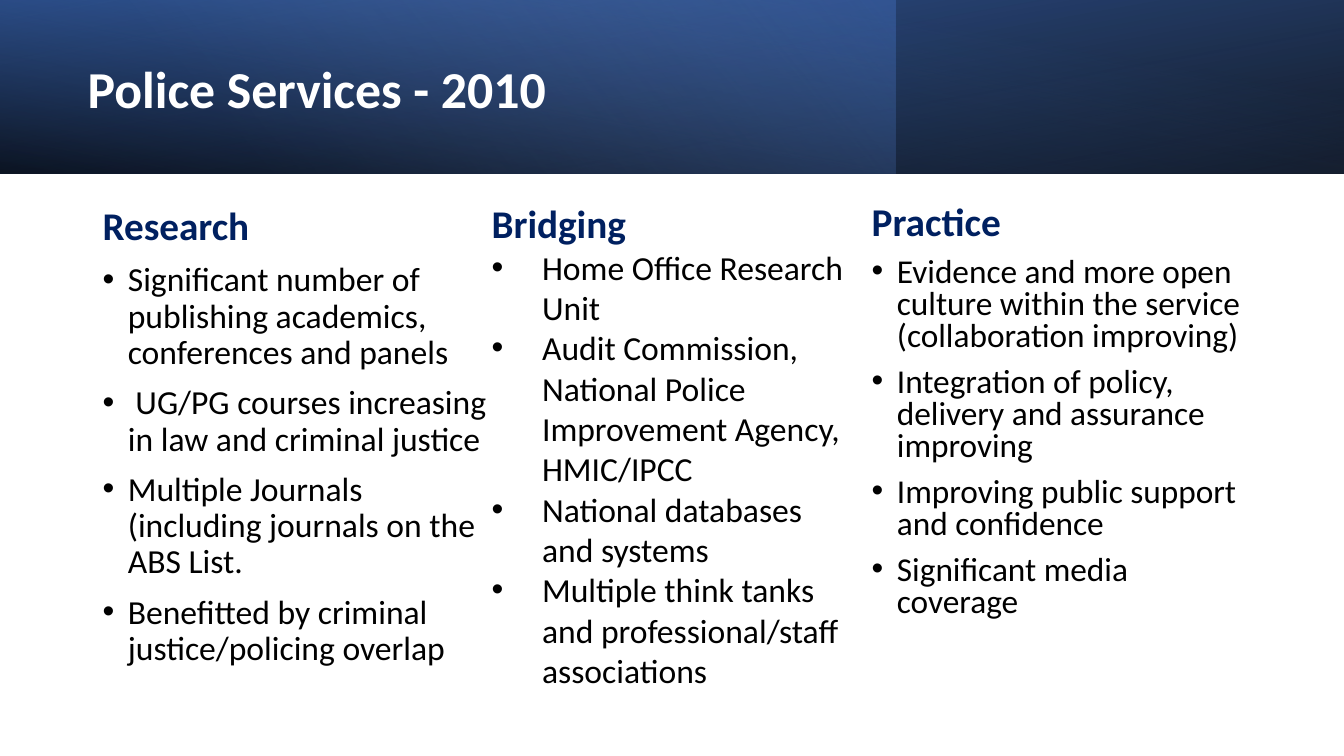
from pptx import Presentation
from pptx.dml.color import RGBColor
from pptx.enum.shapes import MSO_SHAPE
from pptx.enum.text import MSO_ANCHOR, MSO_AUTO_SIZE, PP_ALIGN
from pptx.util import Pt
from lxml.etree import SubElement
from pptx.oxml.ns import qn

TITLE = "Police Services - 2010"
COLUMNS = [
    dict(heading="Research", box=(66.24, 144, 295.92, 342.72),
         sizes=(28, 24), spacing=0.9, before=10, indent=18,
         points=["Significant number of publishing academics, conferences and panels",
                 " UG/PG courses increasing in law and criminal justice",
                 "Multiple Journals (including journals on the ABS List.",
                 "Benefitted by criminal justice/policing overlap"]),
    dict(heading="Practice", box=(615.6, 144, 277.92, 342.72),
         sizes=(28.1, 23.8), spacing=0.8, before=10, indent=18,
         points=["Evidence and more open culture within the service (collaboration improving)",
                 "Integration of policy, delivery and assurance improving",
                 "Improving public support and confidence",
                 "Significant media coverage"]),
    dict(heading="Bridging", box=(344.16, 138.96, 271.44, 361.44),
         sizes=(28, 24), spacing=1.0, before=0, indent=36,
         points=["Home Office Research Unit",
                 "Audit Commission, National Police Improvement Agency, HMIC/IPCC",
                 "National databases and systems",
                 "Multiple think tanks and professional/staff associations"]),
]
THEME = dict(font="Calibri", title="FFFFFF", heading="002060", text="000000",
             title_size=37, shade="000000", deep="2F5597", blue="4472C4", pale="8FAADC")
WIDTH, HEIGHT, BANNER = 960, 540, 123.84
BANDS = [
    dict(width=WIDTH, angle=100, rotation=180, flip=True,
         stops=[(0, "shade", 96), (100, "deep", 100)]),
    dict(width=640, angle=140, rotation=0, flip=False,
         stops=[(0, "blue", 41), (74, "pale", 0)]),
    dict(width=WIDTH, angle=260, rotation=0, flip=True,
         stops=[(0, "shade", 63), (78, "blue", 15)]),
]


def apply(target, values):
    for name, value in values.items():
        setattr(target, name, value)


def place(shape, box):
    apply(shape, dict(zip(("left", "top", "width", "height"), map(Pt, box))))


def add_run(p, text, size, color, bold):
    r = p.add_run()
    r.text = text
    apply(r.font, dict(name=THEME["font"], size=Pt(size), bold=bold))
    r.font.color.rgb = RGBColor.from_string(THEME[color])


def add_band(s, band):
    sp = s.shapes.add_shape(MSO_SHAPE.RECTANGLE, 0, 0, Pt(band["width"]), Pt(BANNER))
    sp.shadow.inherit = False
    sp.line.fill.background()
    sp.rotation = band["rotation"]
    if band["flip"]:
        sp.element.spPr.find(qn("a:xfrm")).set("flipH", "1")
    sp.fill.gradient()
    sp.fill.gradient_angle = 360 - band["angle"]
    for stop, (position, color, _) in zip(sp.fill.gradient_stops, band["stops"]):
        stop.position = position / 100
        stop.color.rgb = RGBColor.from_string(THEME[color])
    colors = sp.element.spPr.iter(qn("a:srgbClr"))
    for color, (_, _, opacity) in zip(list(colors), band["stops"]):
        SubElement(color, qn("a:alpha")).set("val", str(opacity * 1000))


def add_bullet(p, indent):
    pPr = p._p.get_or_add_pPr()
    pPr.set("marL", str(Pt(indent)))
    pPr.set("indent", str(-Pt(indent)))
    SubElement(pPr, qn("a:buFont")).set("typeface", "Arial")
    SubElement(pPr, qn("a:buChar")).set("char", "•")


def add_column(s, column):
    tf = s.shapes.add_textbox(*map(Pt, column["box"])).text_frame
    tf.word_wrap = True
    heading_size, text_size = column["sizes"]
    format_values = dict(line_spacing=column["spacing"], space_before=Pt(column["before"]))
    p = tf.paragraphs[0]
    apply(p, format_values)
    add_run(p, column["heading"], heading_size, "heading", True)
    for point in column["points"]:
        p = tf.add_paragraph()
        apply(p, format_values)
        add_bullet(p, column["indent"])
        add_run(p, point, text_size, "text", False)


def add_title(s):
    title = s.shapes.title
    place(title, (55.44, 19.44, 555.84, 91.44))
    tf = title.text_frame
    apply(tf, dict(word_wrap=True, auto_size=MSO_AUTO_SIZE.NONE,
                   vertical_anchor=MSO_ANCHOR.MIDDLE))
    p = tf.paragraphs[0]
    apply(p, dict(alignment=PP_ALIGN.LEFT, line_spacing=0.9))
    add_run(p, TITLE, THEME["title_size"], "title", True)
    s.shapes._spTree.append(title.element)


def main():
    prs = Presentation()
    apply(prs, dict(slide_width=Pt(WIDTH), slide_height=Pt(HEIGHT)))
    s = prs.slides.add_slide(prs.slide_layouts[5])
    for band in BANDS:
        add_band(s, band)
    add_title(s)
    for column in COLUMNS:
        add_column(s, column)
    prs.save("out.pptx")


if __name__ == "__main__":
    main()
